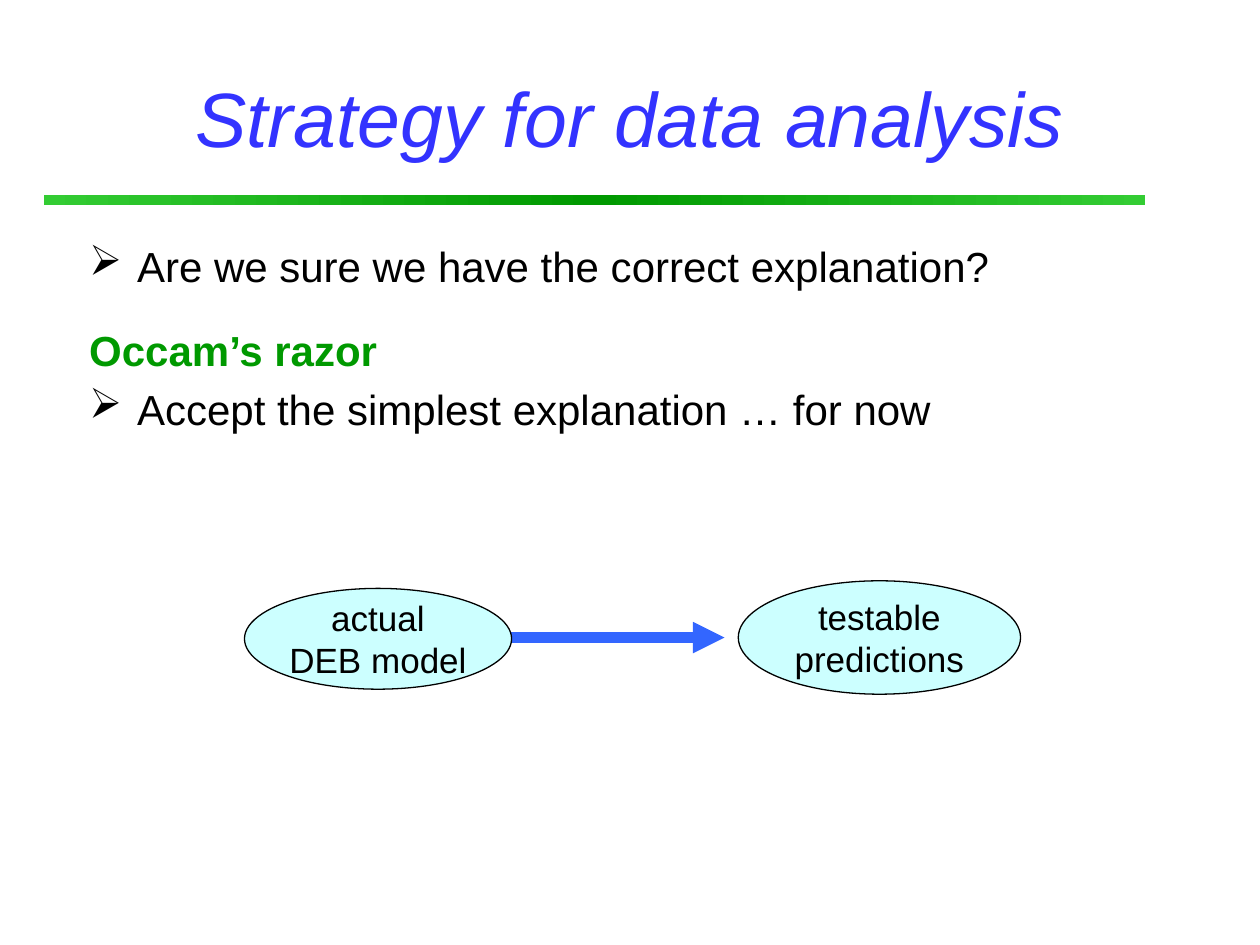
from copy import deepcopy

from lxml.etree import SubElement
from pptx import Presentation
from pptx.dml.color import RGBColor
from pptx.enum.shapes import MSO_CONNECTOR as Connector, MSO_SHAPE as Preset
from pptx.enum.text import MSO_ANCHOR as Anchor, PP_ALIGN as Align
from pptx.oxml.ns import qn
from pptx.util import Inches, Pt

BLACK = RGBColor(0x00, 0x00, 0x00)
TITLE_BLUE = RGBColor(0x33, 0x33, 0xFF)
ARROW_BLUE = RGBColor(0x33, 0x66, 0xFF)
PALE_CYAN = RGBColor(0xCC, 0xFF, 0xFF)
GREEN = RGBColor(0x00, 0x99, 0x00)
LIGHT_GREEN = RGBColor(0x33, 0xCC, 0x33)


class SlideBuilder:
    font_name = "Arial"
    hanging_indent = Inches(0.38)

    def __init__(self, slide):
        self.slide = slide

    def style(self, paragraph, size, color=BLACK, bold=False, italic=False):
        font = paragraph.font
        font.name, font.size = self.font_name, Pt(size)
        font.bold, font.italic = bold, italic
        font.color.rgb = color

    def text_frame(self, left, top, width, height, anchor=Anchor.TOP):
        box = self.slide.shapes.add_textbox(
            Inches(left), Inches(top), Inches(width), Inches(height))
        frame = box.text_frame
        frame.word_wrap = True
        frame.vertical_anchor = anchor
        return frame

    def title(self, text, *area):
        paragraph = self.text_frame(*area, anchor=Anchor.MIDDLE).paragraphs[0]
        paragraph.text = text
        paragraph.alignment = Align.CENTER
        self.style(paragraph, 44, TITLE_BLUE, italic=True)

    def body(self, items, *area):
        """Write (text, is_heading, space_before) items; non-headings get bullets."""
        frame = self.text_frame(*area)
        for index, (text, is_heading, space_before) in enumerate(items):
            paragraph = frame.add_paragraph() if index else frame.paragraphs[0]
            paragraph.text = text
            paragraph.space_before = Pt(space_before)
            self.style(paragraph, 24, GREEN if is_heading else BLACK, bold=is_heading)
            properties = paragraph._p.get_or_add_pPr()
            properties.set("marL", str(self.hanging_indent))
            properties.set("indent", str(-self.hanging_indent))
            if not is_heading:
                bullet = properties.makeelement(qn("a:buChar"), {"char": "➢"})
                properties.find(qn("a:defRPr")).addprevious(bullet)

    def shape(self, preset, left, top, width, height):
        shape = self.slide.shapes.add_shape(
            preset, Inches(left), Inches(top), Inches(width), Inches(height))
        shape.shadow.inherit = False
        return shape

    def gradient_rule(self, *area):
        rule = self.shape(Preset.RECTANGLE, *area)
        rule.line.fill.background()
        rule.fill.gradient()
        rule.fill.gradient_angle = 0
        outer, middle = rule.fill.gradient_stops
        outer.color.rgb, middle.color.rgb = LIGHT_GREEN, GREEN
        middle.position = 0.5
        stops = rule._element.spPr.find(".//" + qn("a:gsLst"))
        last = deepcopy(stops[0])
        last.set("pos", "100000")
        stops.append(last)

    def ellipse(self, lines, *area):
        ellipse = self.shape(Preset.OVAL, *area)
        ellipse.fill.solid()
        ellipse.fill.fore_color.rgb = PALE_CYAN
        ellipse.line.color.rgb = BLACK
        ellipse.line.width = Pt(0.75)
        frame = ellipse.text_frame
        frame.word_wrap = False
        frame.vertical_anchor = Anchor.MIDDLE
        frame.text = "\n".join(lines)
        for paragraph in frame.paragraphs:
            paragraph.alignment = Align.CENTER
            self.style(paragraph, 20)

    def arrow(self, start, end, y):
        arrow = self.slide.shapes.add_connector(
            Connector.STRAIGHT, Inches(start), Inches(y), Inches(end), Inches(y))
        arrow.line.color.rgb = ARROW_BLUE
        arrow.line.width = Pt(6)
        SubElement(arrow.line._get_or_add_ln(), qn("a:tailEnd"), type="triangle")
        SubElement(arrow._element.spPr, qn("a:effectLst"))


def main():
    presentation = Presentation()
    presentation.slide_width, presentation.slide_height = Inches(10), Inches(7.5)
    builder = SlideBuilder(presentation.slides.add_slide(presentation.slide_layouts[6]))

    builder.gradient_rule(0.35, 1.55, 8.74, 0.08)
    builder.title("Strategy for data analysis", 0.5, 0.3, 9, 1.25)
    builder.body([
        ("Are we sure we have the correct explanation?", False, 0),
        ("Occam’s razor", True, 19),
        ("Accept the simplest explanation … for now", False, 5),
    ], 0.61, 1.86, 9, 4.84)

    builder.arrow(3.89, 5.75, 5.06)
    builder.ellipse(["testable", "predictions"], 5.86, 4.61, 2.24, 0.9)
    builder.ellipse(["actual", "DEB model"], 1.94, 4.67, 2.12, 0.8)

    presentation.save("out.pptx")


if __name__ == "__main__":
    main()
